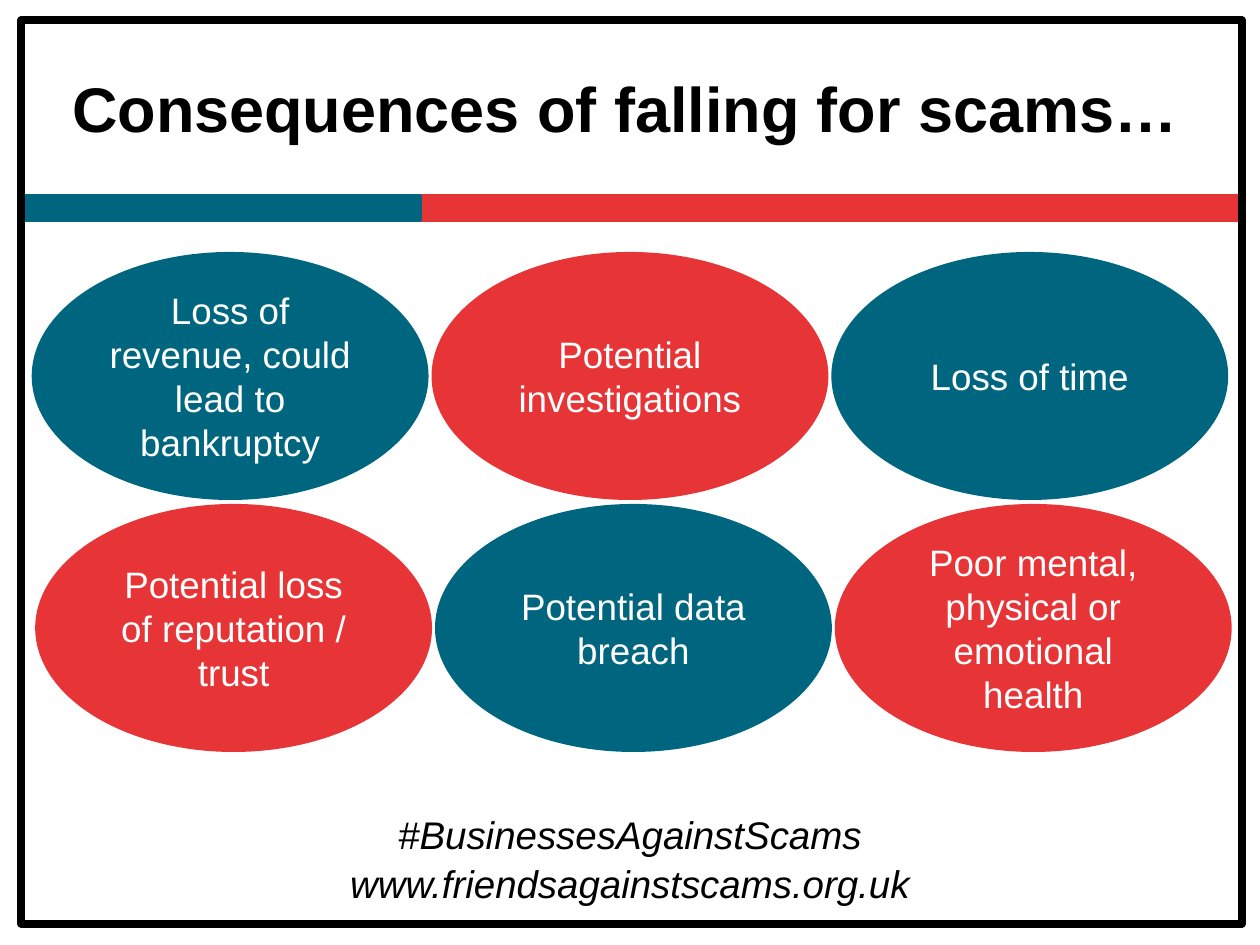
from pptx import Presentation
from pptx import util as u
from pptx.dml.color import RGBColor
from pptx.enum import shapes, text

TEAL = "006680"
RED = "E73437"
BLACK = "000000"
WHITE = "FFFFFF"

CONSEQUENCES = [
    (0.64, 5.08, [
        ("Loss of revenue, could lead to bankruptcy", TEAL),
        ("Potential investigations", RED),
        ("Loss of time", TEAL),
    ]),
    (0.71, 10.16, [
        ("Potential loss of reputation / trust", RED),
        ("Potential data breach", TEAL),
        ("Poor mental, physical or emotional health", RED),
    ]),
]
OVAL_WIDTH, OVAL_HEIGHT, OVAL_PITCH = 8, 5, 8.06


def colour(value):
    return RGBColor.from_string(value)


def place(box, left, top, width, height):
    box.left, box.top = u.Cm(left), u.Cm(top)
    box.width, box.height = u.Cm(width), u.Cm(height)


def write(box, words, size, ink, bold=False, italic=False):
    frame = box.text_frame
    frame.word_wrap = True
    frame.text = words
    para = frame.paragraphs[0]
    para.alignment = text.PP_ALIGN.CENTER
    font = para.font
    font.name = "Arial"
    font.size = u.Pt(size)
    font.bold = bold
    font.italic = italic
    font.color.rgb = colour(ink)


def add_figure(page, kind, area, fill=None, line=None, weight=2):
    figure = page.shapes.add_shape(kind, *map(u.Cm, area))
    figure.shadow.inherit = False
    if fill:
        figure.fill.solid()
        figure.fill.fore_color.rgb = colour(fill)
    else:
        figure.fill.background()
    if line:
        figure.line.color.rgb = colour(line)
        figure.line.width = u.Pt(weight)
    else:
        figure.line.fill.background()
    return figure


def add_title(page, words):
    title = page.shapes.title
    place(title, 0.64, 1.27, 23.93, 3.18)
    write(title, words, 36, BLACK, bold=True)
    title.text_frame.vertical_anchor = text.MSO_ANCHOR.TOP


def add_backdrop(page):
    rectangle = shapes.MSO_SHAPE.RECTANGLE
    add_figure(page, rectangle, (1.07, 3.94, 23.98, 0.51), RED, RED)
    add_figure(page, rectangle, (0.43, 3.94, 8.05, 0.51), TEAL, TEAL)
    add_figure(page, rectangle, (0.43, 0.41, 24.61, 18.21), line=BLACK, weight=4.5)


def add_footer(page, words, top):
    box = page.shapes.add_textbox(u.Cm(0), u.Cm(top), u.Cm(25.4), u.Cm(1.2))
    write(box, words, 22, BLACK, italic=True)


def add_ovals(page):
    for left, top, row in CONSEQUENCES:
        for column, (words, fill) in enumerate(row):
            area = (left + column * OVAL_PITCH, top, OVAL_WIDTH, OVAL_HEIGHT)
            oval = add_figure(page, shapes.MSO_SHAPE.OVAL, area, fill)
            write(oval, words, 21, WHITE)


def main():
    deck = Presentation()
    deck.slide_width, deck.slide_height = u.Cm(25.4), u.Cm(19.05)
    page = deck.slides.add_slide(deck.slide_layouts[5])
    add_title(page, "Consequences of falling for scams…")
    add_backdrop(page)
    add_footer(page, "#BusinessesAgainstScams", 16.23)
    add_footer(page, "www.friendsagainstscams.org.uk", 17.22)
    add_ovals(page)
    deck.save("out.pptx")


if __name__ == "__main__":
    main()
